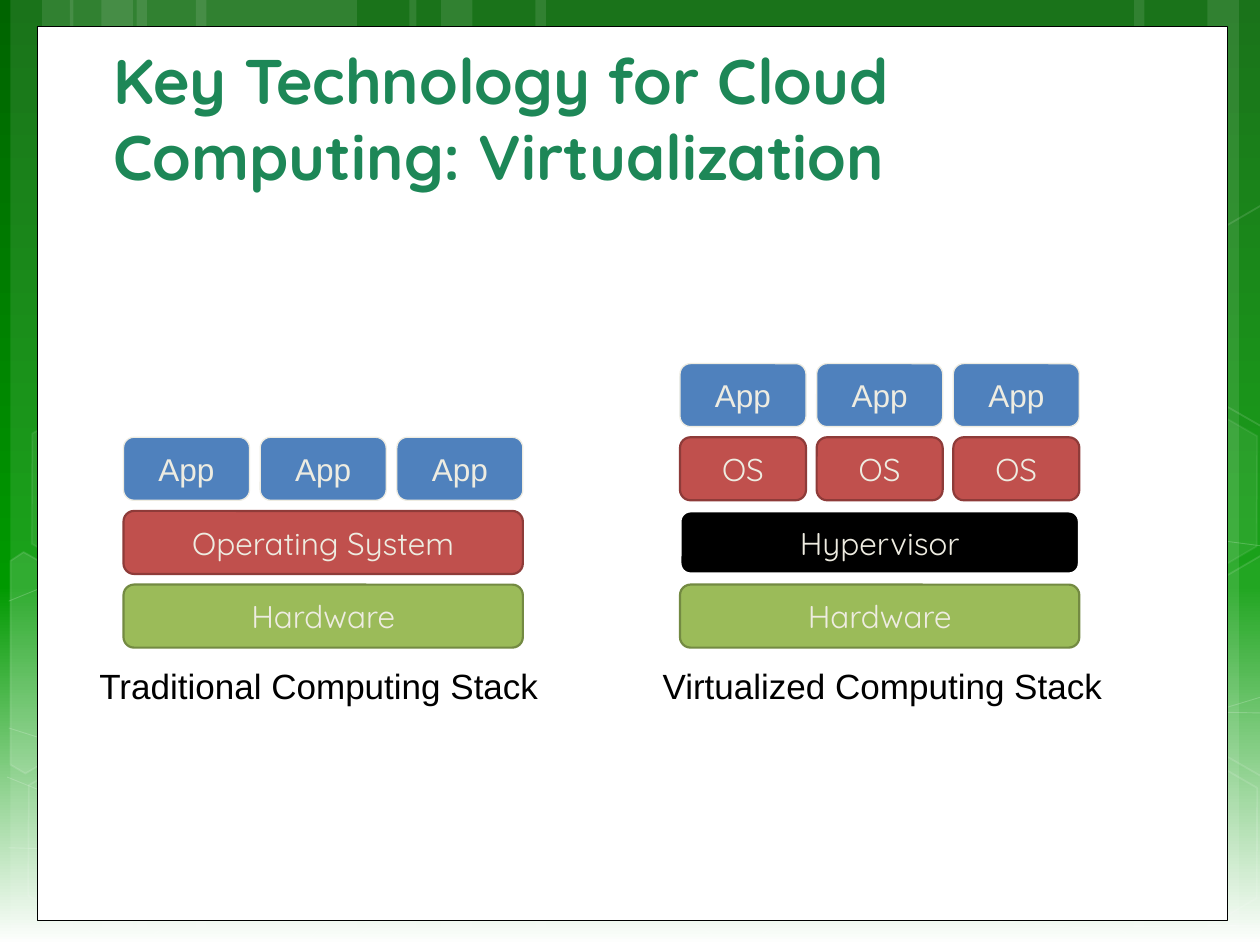
from lxml.etree import SubElement
from pptx import Presentation
from pptx.dml.color import RGBColor as RGB
from pptx.enum.shapes import MSO_SHAPE as SHAPE
from pptx.enum.text import MSO_ANCHOR as ANCHOR, MSO_AUTO_SIZE as AUTO_SIZE, PP_ALIGN as ALIGN
from pptx.oxml.ns import qn
from pptx.util import Pt

COLORS = {
    "white": "FFFFFF", "black": "000000", "title": "1D8757", "label": "EEECE1",
    "dark green": "006400", "green": "009900",
    "app": "4F81BD", "system": "C0504D", "system edge": "8E3B39",
    "hardware": "9BBB59", "hardware edge": "738A42",
}


def paint(shape, fill=None, edge=None, width=1, fill_alpha=100, edge_alpha=100):
    """Set fill and outline; alpha is opacity in percent."""
    shape.shadow.inherit = False
    for part, color, alpha, tag in ((shape.fill, fill, fill_alpha, "a:solidFill"),
                                    (shape.line.fill, edge, edge_alpha, "a:ln")):
        if color is None:
            part.background()
            continue
        part.solid()
        part.fore_color.rgb = RGB.from_string(COLORS[color])
        if alpha < 100:
            node = shape.element.spPr.find(qn(tag))
            mark = next(node.iter(qn("a:srgbClr")))
            SubElement(mark, qn("a:alpha"), val=str(alpha * 1000))
    if edge:
        shape.line.width = Pt(width)


def style(para, font, size, color):
    para.font.name = font
    para.font.size = Pt(size)
    para.font.color.rgb = RGB.from_string(COLORS[color])


deck = Presentation()
deck.slide_width, deck.slide_height = Pt(720), Pt(540)
page = deck.slides.add_slide(deck.slide_layouts[5])
shapes = page.shapes

# Background gradient, dark at the top
backdrop = page.background.fill
backdrop.gradient()
backdrop.gradient_angle = 270
stops = next(page.element.iter(qn("a:gsLst")))
for stop in list(stops):
    stops.remove(stop)
for position, color in ((0, "dark green"), (62, "green"), (100, "white")):
    stop = SubElement(stops, qn("a:gs"), pos=str(position * 1000))
    SubElement(stop, qn("a:srgbClr"), val=COLORS[color])

# Vertical translucent stripes
for left, width in ((78, 126), (6, 36), (24, 60), (112, 126), (40, 36), (58, 60),
                    (528, 126), (690, 36), (648, 60), (306, 222), (234, 36), (252, 60)):
    stripe = shapes.add_shape(SHAPE.RECTANGLE, Pt(left), 0, Pt(width), Pt(540))
    paint(stripe, "white", fill_alpha=10)

# Thin sweeping lines
sweeps = (
    ((5, 484.5), (137, 488), (330, 479), (570, 444), (725, 397)),
    ((5, 343.5), (87, 310), (250, 279), (471, 279), (725, 312.5)),
    ((4, 444), (240, 539)),
    ((5, 416), (92, 443.5), (257, 484.5), (452, 517), (614, 530), (725, 528.5)),
    ((174, 539), (217, 497.5), (279, 460), (438, 416), (572, 404.5), (724, 407.5)),
)
for start, *rest in sweeps:
    pen = shapes.build_freeform(Pt(start[0]), Pt(start[1]))
    pen.add_line_segments([(Pt(x), Pt(y)) for x, y in rest], close=False)
    paint(pen.convert_to_shape(), edge="white", width=0.5, edge_alpha=20)

# Tilted hexagons: left, top, fill opacity, edge opacity
for left, top, fill_alpha, edge_alpha in (
        (358, 424, 6, 12), (8, 425.5, 0, 12), (10, 224.5, 7, 8),
        (125, 426, 0, 12), (600.5, 427, 0, 12), (600.5, 226, 7, 8)):
    hexagon = shapes.add_shape(SHAPE.HEXAGON, Pt(left), Pt(top), Pt(126), Pt(109.5))
    hexagon.adjustments[0] = 0.285
    hexagon.rotation = 30
    paint(hexagon, "white" if fill_alpha else None, "white", 1, fill_alpha, edge_alpha)

# Hexagons cut off by the slide edges
cut_hexagons = (
    (10, ((6, 320.5), (13.5, 315.5), (69, 347), (68.5, 410.5), (14.5, 442), (6, 437))),
    (4, ((666.5, 349), (720.5, 317.5), (726.5, 321), (726.5, 441.5), (721.5, 444), (666.5, 412.5))),
    (0, ((666.5, 149), (720.5, 117.5), (727, 121), (726.5, 241), (721.5, 244), (666.5, 212.5))),
)
for fill_alpha, (start, *rest) in cut_hexagons:
    pen = shapes.build_freeform(Pt(start[0]), Pt(start[1]))
    pen.add_line_segments([(Pt(x), Pt(y)) for x, y in rest], close=True)
    paint(pen.convert_to_shape(), "white" if fill_alpha else None, "white", 1, fill_alpha, 12)

# White content panel
panel = shapes.add_shape(SHAPE.RECTANGLE, Pt(21.5), Pt(15), Pt(680), Pt(510.75))
paint(panel, "white", "black", 0.5)

# Title, brought in front of the panel
title = shapes.title
title.element.getparent().append(title.element)
title.left, title.top, title.width, title.height = Pt(57.6), Pt(59), Pt(606), Pt(54.75)
title.text_frame.text = "Key Technology for Cloud Computing: Virtualization"
title.text_frame.word_wrap = True
title.text_frame.auto_size = AUTO_SIZE.NONE
title.text_frame.vertical_anchor = ANCHOR.BOTTOM
para = title.text_frame.paragraphs[0]
para.alignment = ALIGN.LEFT
style(para, "Quicksand", 36, "title")
para.font.bold = True

# Computing stacks, rows listed from the bottom up
LAYERS = {  # kind: fill, edge, edge width, font
    "hardware": ("hardware", "hardware edge", 1.25, "Quicksand"),
    "system": ("system", "system edge", 1.25, "Quicksand"),
    "hypervisor": ("black", "white", 1.75, "Quicksand"),
    "app": ("app", "label", 0.75, "Arial"),
}
STACK_WIDTH, GAP, ROW_HEIGHT, ROW_PITCH, BOTTOM_ROW = 228.2, 6.1, 36, 42.1, 334.1
stacks = (
    (70.6, 49.7, "Traditional Computing Stack",
     (("hardware", "Hardware", 1), ("system", "Operating System", 1), ("app", "App", 3))),
    (388.6, 371.5, "Virtualized Computing Stack",
     (("hardware", "Hardware", 1), ("hypervisor", "Hypervisor", 1),
      ("system", "OS", 3), ("app", "App", 3))),
)
for stack_left, caption_left, caption, rows in stacks:
    for level, (kind, label, count) in enumerate(rows):
        fill, edge, edge_width, font = LAYERS[kind]
        width = (STACK_WIDTH - GAP * (count - 1)) / count
        for column in range(count):
            block = shapes.add_shape(
                SHAPE.ROUNDED_RECTANGLE, Pt(stack_left + column * (width + GAP)),
                Pt(BOTTOM_ROW - level * ROW_PITCH), Pt(width), Pt(ROW_HEIGHT))
            paint(block, fill, edge, edge_width)
            block.text_frame.text = label
            block.text_frame.vertical_anchor = ANCHOR.MIDDLE
            para = block.text_frame.paragraphs[0]
            para.alignment = ALIGN.CENTER
            style(para, font, 18, "label")

    box = shapes.add_textbox(Pt(caption_left), Pt(376), Pt(267.8), Pt(31.5))
    box.text_frame.text = caption
    box.text_frame.word_wrap = False
    box.text_frame.auto_size = AUTO_SIZE.SHAPE_TO_FIT_TEXT
    style(box.text_frame.paragraphs[0], "Arial", 20, "black")

deck.save("out.pptx")
